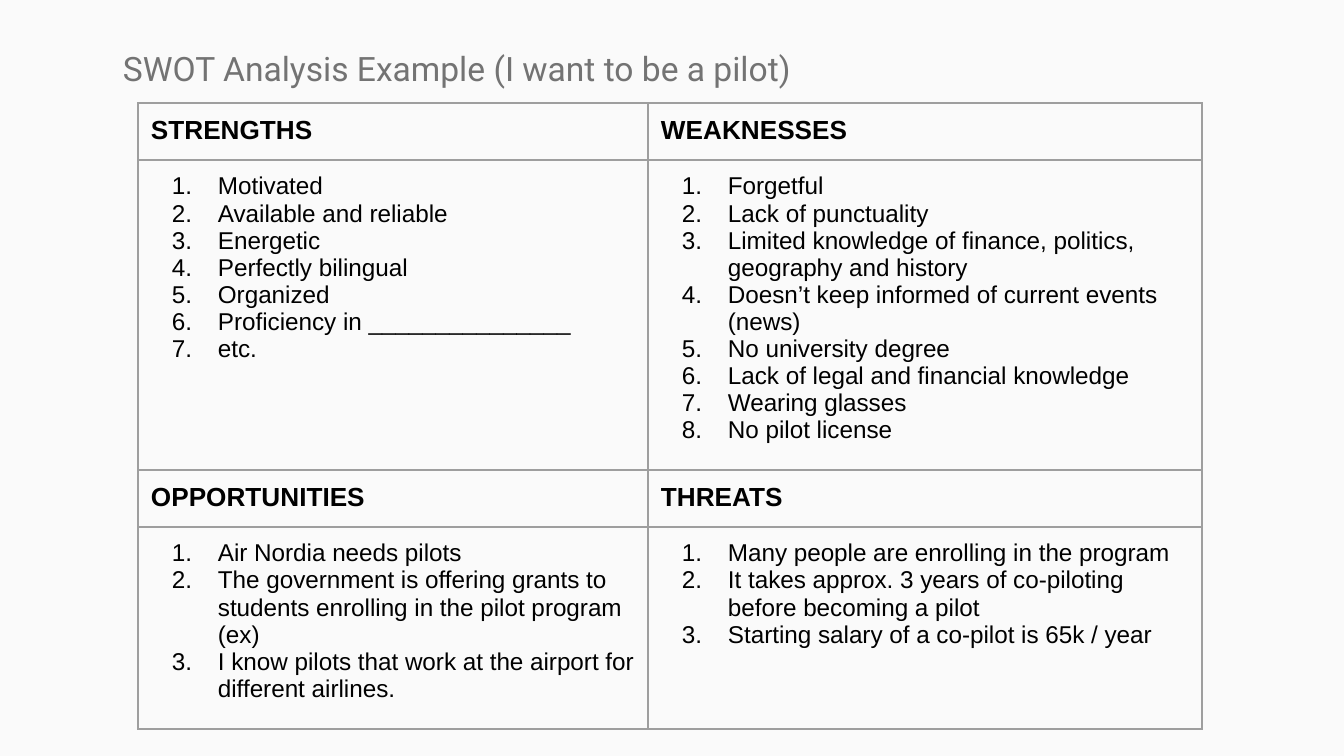
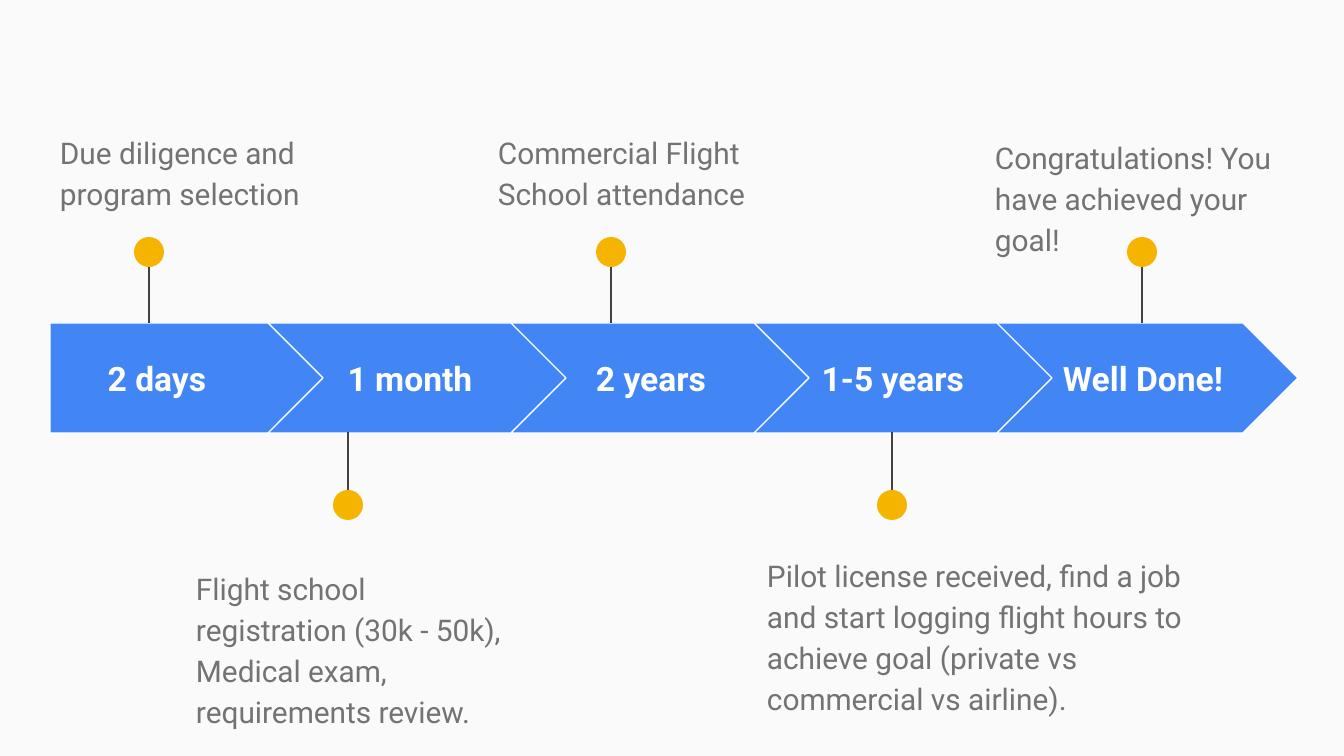
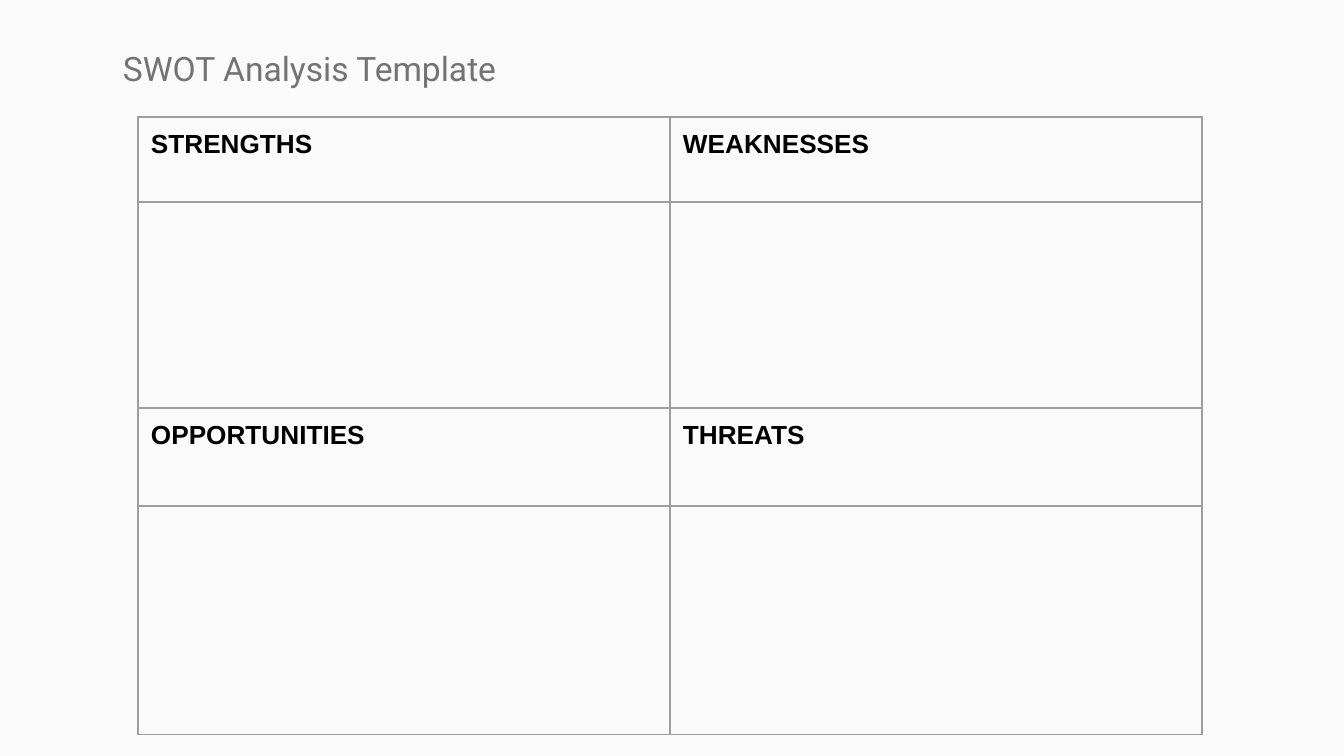
from lxml import etree
from pptx import Presentation
from pptx import util as u
from pptx.dml.color import RGBColor
from pptx.enum import shapes, text
from pptx.oxml import ns

HUES = {
    "page": "FAFAFA", "grey": "737373", "ink": "000000", "grid": "9E9E9E",
    "band": "4285F4", "dot": "F4B400", "stem": "424242", "white": "FFFFFF",
}
PAD = 13
HEADS = ("STRENGTHS", "WEAKNESSES", "OPPORTUNITIES", "THREATS")
PILOT = (
    ("Motivated", "Available and reliable", "Energetic", "Perfectly bilingual",
     "Organized", "Proficiency in _______________", "etc."),
    ("Forgetful", "Lack of punctuality",
     "Limited knowledge of finance, politics, geography and history",
     "Doesn’t keep informed of current events (news)",
     "No university degree", "Lack of legal and financial knowledge",
     "Wearing glasses", "No pilot license"),
    ("Air Nordia needs pilots",
     "The government is offering grants to students enrolling in the pilot program (ex)",
     "I know pilots that work at the airport for different airlines."),
    ("Many people are enrolling in the program",
     "It takes approx. 3 years of co-piloting before becoming a pilot",
     "Starting salary of a co-pilot is 65k / year"),
)
STEPS = (
    ("2 days", (50, 344, 214, 69), 149, True,
     "Due diligence and program selection", (47, 55, 329, 133)),
    ("1 month", (313, 344, 194, 69), 348, False,
     "Flight school registration (30k - 50k),\nMedical exam, requirements review.",
     (183, 552, 337, 187)),
    ("2 years", (554, 344, 194, 69), 611, True,
     "Commercial Flight School attendance", (485, 55, 329, 133)),
    ("1-5 years", (796, 344, 194, 69), 892, False,
     "Pilot license received, find a job and start logging flight hours to "
     "achieve goal (private vs commercial vs airline).", (754, 539, 474, 179)),
    ("Well Done!", (1046, 344, 194, 69), 1142, True,
     "Congratulations! You have achieved your goal!", (982, 55, 329, 133)),
)


def px(n):
    """Turn px into EMU."""
    return u.Emu(round(n * 914400 / 134.4))


def hue(name):
    """Look up a colour."""
    return RGBColor.from_string(HUES[name])


def write(para, words, size, tint, face="Roboto", bold=False):
    """Add runs to a paragraph, one for each line."""
    for i, line in enumerate(words.split("\n")):
        if i:
            para.add_line_break()
        run = para.add_run()
        run.text = line
        font = run.font
        font.name, font.size, font.bold = face, u.Pt(size), bold
        font.color.rgb = hue(tint)


def frame(slide, box, top=PAD):
    """Add a wrapped text box and return its text frame."""
    tf = slide.shapes.add_textbox(*map(px, box)).text_frame
    tf.word_wrap = True
    tf.margin_left = tf.margin_right = tf.margin_bottom = px(PAD)
    tf.margin_top = px(top)
    return tf


def title(slide, words):
    """Add the slide title."""
    tf = frame(slide, (110, 35, 914, 67))
    tf.auto_size = text.MSO_AUTO_SIZE.SHAPE_TO_FIT_TEXT
    write(tf.paragraphs[0], words, 18, "grey")


def edge(cell):
    """Give a cell thin borders, even margins and no fill."""
    props = cell._tc.get_or_add_tcPr()
    for side in ("lnL", "lnR", "lnT", "lnB"):
        line = etree.SubElement(props, ns.qn("a:" + side), w=str(u.Pt(0.75)))
        fill = etree.SubElement(line, ns.qn("a:solidFill"))
        etree.SubElement(fill, ns.qn("a:srgbClr"), val=HUES["grid"])
    cell.fill.background()
    cell.margin_left = cell.margin_right = px(PAD)
    cell.margin_top = cell.margin_bottom = px(PAD)


def number(para):
    """Number a paragraph with a hanging indent."""
    props = para._p.get_or_add_pPr()
    props.set("marL", str(px(67)))
    props.set("indent", str(px(-46)))
    tint = etree.SubElement(props, ns.qn("a:buClr"))
    etree.SubElement(tint, ns.qn("a:srgbClr"), val=HUES["ink"])
    etree.SubElement(props, ns.qn("a:buAutoNum"), type="arabicPeriod")


def swot(slide, words, spot, cols, rows, lists=((),) * 4):
    """Build a titled four-part table."""
    size = (sum(cols), sum(rows))
    table = slide.shapes.add_table(4, 2, *map(px, spot + size)).table
    table.first_row = table.horz_banding = False
    for col, wide in zip(table.columns, cols):
        col.width = px(wide)
    for row, high in zip(table.rows, rows):
        row.height = px(high)
    for cell in table.iter_cells():
        edge(cell)
    for i, (head, items) in enumerate(zip(HEADS, lists)):
        row, col = i // 2 * 2, i % 2
        write(table.cell(row, col).text_frame.paragraphs[0],
              head, 14, "ink", "Arial", True)
        tf = table.cell(row + 1, col).text_frame
        for k, item in enumerate(items):
            para = tf.add_paragraph() if k else tf.paragraphs[0]
            number(para)
            write(para, item, 13, "ink", "Arial")
    title(slide, words)


def arrow(slide, i, box):
    """Draw one arrow of the band."""
    kind = shapes.MSO_SHAPE.CHEVRON if i else shapes.MSO_SHAPE.PENTAGON
    part = slide.shapes.add_shape(kind, *map(px, box))
    part.shadow.inherit = False
    part.adjustments[0] = 0.5
    part.fill.solid()
    part.fill.fore_color.rgb = hue("band")
    part.line.color.rgb = hue("white")
    part.line.width = u.Pt(0.75)


def pin(slide, mid, above, band):
    """Group a stem and its dot above or below the band."""
    left, top, wide, high = band
    near, far = (top, top - 82) if above else (top + high - 1, top + high + 80)
    group = slide.shapes.add_group_shape().shapes
    stem = group.add_connector(shapes.MSO_CONNECTOR.STRAIGHT,
                               px(mid), px(far), px(mid), px(near))
    stem.line.color.rgb = hue("stem")
    stem.line.width = u.Pt(0.75)
    etree.SubElement(stem._element.spPr, ns.qn("a:effectLst"))
    drop = top - 86 if above else top + high + 57
    dot = group.add_shape(shapes.MSO_SHAPE.OVAL,
                          *map(px, (mid - 15, drop, 30, 30)))
    dot.shadow.inherit = False
    dot.fill.solid()
    dot.fill.fore_color.rgb = hue("dot")
    dot.line.fill.background()


def route(slide, band):
    """Build the timeline along the given band."""
    left, top, wide, high = band
    for i, (span, spot, mid, above, note, box) in enumerate(STEPS):
        start = left + 218 + 243 * (i - 1) if i else left
        arrow(slide, i, (start, top, 301 if i else 275, high))
        tf = frame(slide, spot)
        tf.vertical_anchor = text.MSO_ANCHOR.MIDDLE
        tf.paragraphs[0].alignment = text.PP_ALIGN.CENTER
        write(tf.paragraphs[0], span, 18, "white", bold=True)
        pin(slide, mid, above, band)
        para = frame(slide, box, 79 if above else PAD).paragraphs[0]
        para.line_spacing = 1.15
        para.space_after = u.Pt(16)
        write(para, note, 16, "grey")


def page(deck):
    """Add a blank slide with the shared background."""
    slide = deck.slides.add_slide(deck.slide_layouts[6])
    slide.background.fill.solid()
    slide.background.fill.fore_color.rgb = hue("page")
    return slide


def main():
    """Build and save the deck."""
    deck = Presentation()
    deck.slide_width, deck.slide_height = px(1344), px(756)
    swot(page(deck), "SWOT Analysis Example (I want to be a pilot)",
         (138, 103), (510, 554), (57, 310, 57, 202), PILOT)
    route(page(deck), (50, 323, 1248, 110))
    swot(page(deck), "SWOT Analysis Template",
         (138, 117), (532, 532), (85, 206, 98, 229))
    deck.save("out.pptx")


if __name__ == "__main__":
    main()
